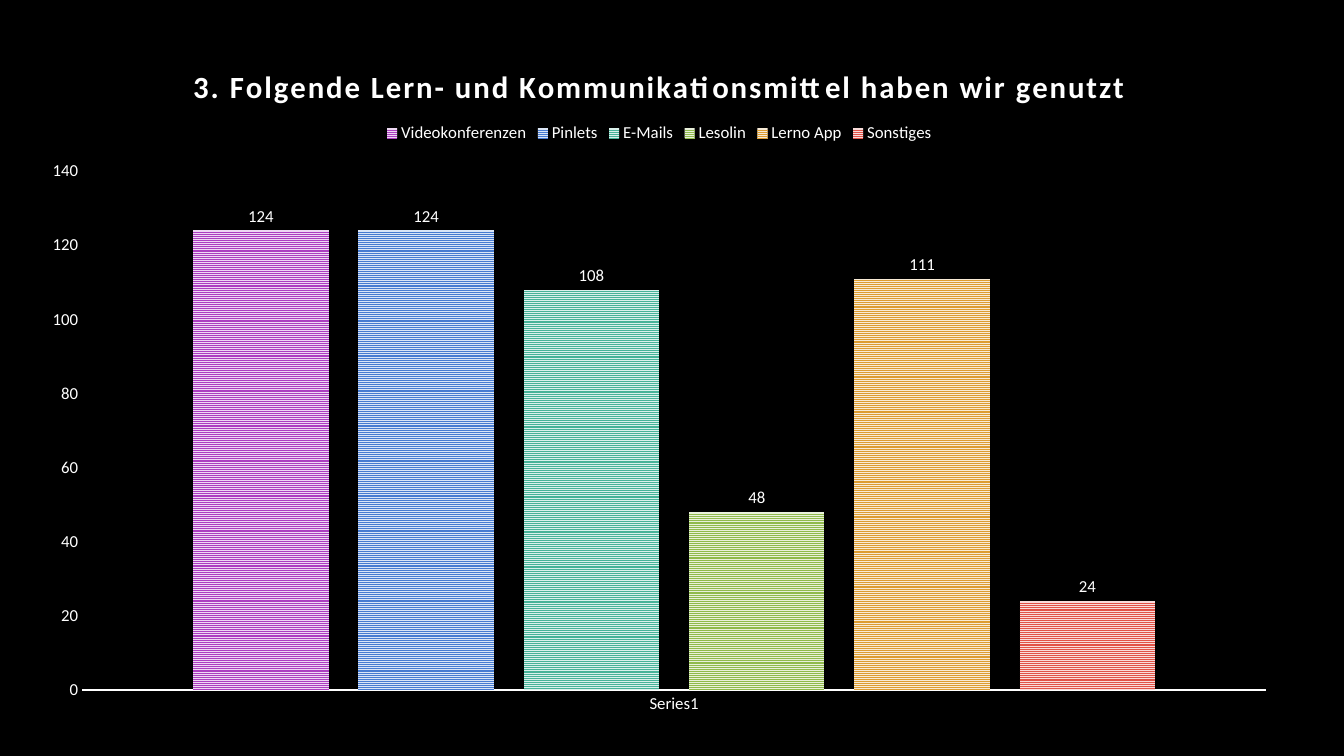
from lxml.etree import fromstring
from pptx import Presentation
from pptx.chart.data import CategoryChartData as ChartData
from pptx.dml.color import RGBColor
from pptx.enum.chart import XL_CHART_TYPE as Kind, XL_LABEL_POSITION as Spot
from pptx.enum.chart import XL_LEGEND_POSITION as Side, XL_TICK_MARK as Tick
from pptx.enum.dml import MSO_PATTERN as Pattern
from pptx.oxml.ns import nsdecls
from pptx.util import Cm, Pt

WIDE, HIGH = Cm(31.85), Cm(17.2)


def paint(color, code):
    color.rgb = RGBColor.from_string(code)


def place(node, index, inner, **spots):
    for old in node.xpath("c:layout"):
        node.remove(old)
    parts = '<c:layoutTarget val="inner"/>' if inner else ""
    parts += "".join(f'<c:{key}Mode val="edge"/>' for key in "xy")
    for key, size in spots.items():
        share = Cm(size) / (WIDE if key in "xw" else HIGH)
        parts += f'<c:{key} val="{share}"/>'
    node.insert(index, fromstring(
        f'<c:layout {nsdecls("c")}><c:manualLayout>{parts}</c:manualLayout></c:layout>'))


bars = [
    ("Videokonferenzen", 124, "AC3EC1", "EED8F3"),
    ("Pinlets", 124, "477BD1", "DAE5F6"),
    ("E-Mails", 108, "46B298", "D9F0EB"),
    ("Lesolin", 48, "90BA4C", "E9F1DB"),
    ("Lerno App", 111, "DD9D31", "F8EBD6"),
    ("Sonstiges", 24, "E25247", "F9DCDA"),
]

deck = Presentation()
deck.slide_width, deck.slide_height = Cm(33.87), Cm(19.05)
slide = deck.slides.add_slide(deck.slide_layouts[6])
slide.background.fill.solid()
paint(slide.background.fill.fore_color, "000000")

data = ChartData()
data.categories = ["Series1"]
for name, count, front, back in bars:
    data.add_series(name, [count])
frame = slide.shapes.add_chart(
    Kind.COLUMN_CLUSTERED, Cm(0.69), Cm(1.12), WIDE, HIGH, data)
chart = frame.chart
chart.font.name = "Calibri"
chart.font.size = Pt(12)
paint(chart.font.color, "FFFFFF")

head = chart.chart_title.text_frame
head.text = "3. Folgende Lern- und Kommunikationsmittel haben wir genutzt"
font = head.paragraphs[0].runs[0].font
font.name, font.size, font.bold = "Calibri", Pt(22), True
paint(font.color, "FFFFFF")
for props in chart.element.xpath(".//c:title//a:rPr"):
    props.set("spc", "150")

chart.has_legend = True
chart.legend.position = Side.TOP
chart.legend.include_in_layout = False

plot = chart.plots[0]
plot.gap_width, plot.overlap = 164, -22
plot.vary_by_categories = False
for series, (name, count, front, back) in zip(plot.series, bars):
    fill = series.format.fill
    fill.patterned()
    fill.pattern = Pattern.NARROW_HORIZONTAL
    paint(fill.fore_color, front)
    paint(fill.back_color, back)
    series.format.line.fill.background()
    labels = series.data_labels
    labels.show_value = True
    labels.position = Spot.OUTSIDE_END
    labels.font.name, labels.font.size = "Calibri", Pt(12)
    paint(labels.font.color, "FFFFFF")

for axis in (chart.category_axis, chart.value_axis):
    axis.has_major_gridlines = False
    axis.major_tick_mark = axis.minor_tick_mark = Tick.NONE
chart.category_axis.format.line.width = Pt(1.5)
paint(chart.category_axis.format.line.color, "FFFFFF")
scale = chart.value_axis
scale.format.line.fill.background()
scale.minimum_scale, scale.maximum_scale, scale.major_unit = 0, 140, 20

root = chart.element
place(root.xpath(".//c:title")[0], 1, False, x=4.04, y=0.39)
place(root.xpath(".//c:legend")[0], 1, False, x=8.92, y=1.89, w=14.01, h=0.69)
place(root.xpath(".//c:plotArea")[0], 0, True, x=1.38, y=3.19, w=29.84, h=13.08)

deck.save("out.pptx")
